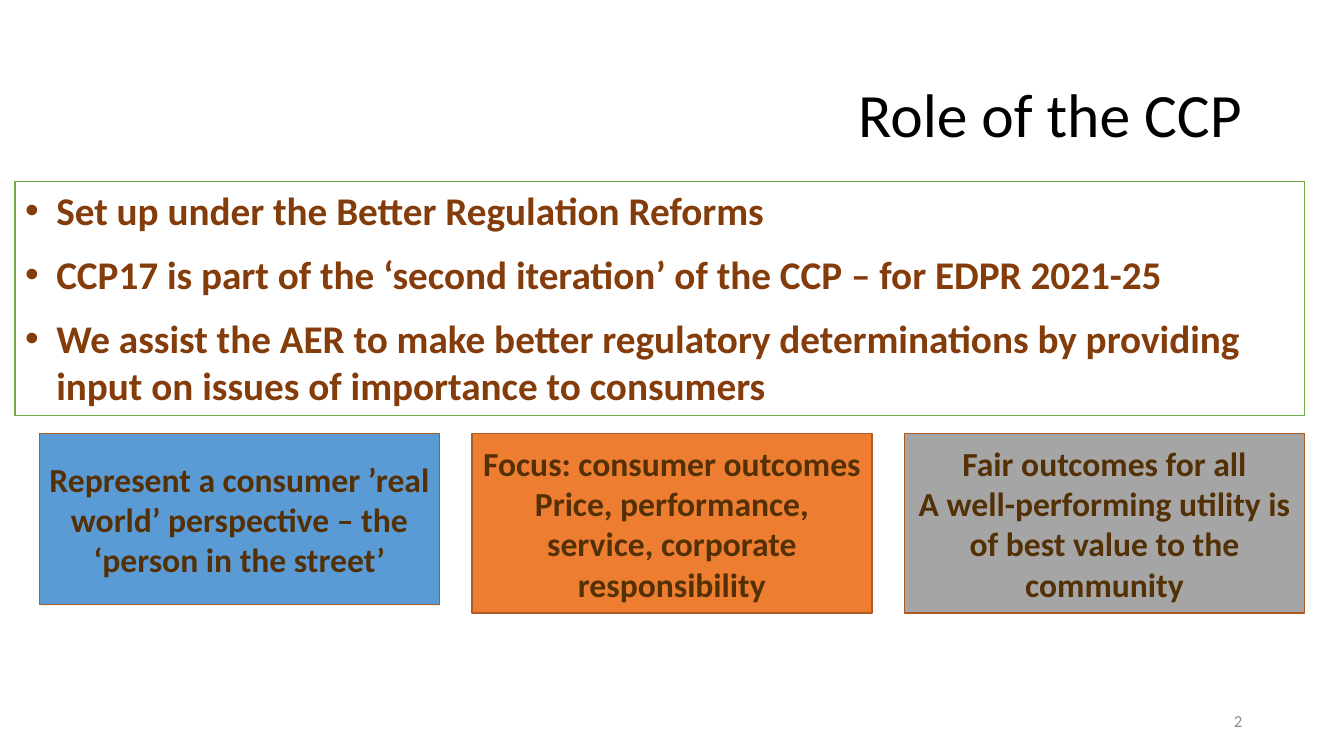
from pptx import Presentation
from pptx.dml.color import RGBColor
from pptx.enum.shapes import MSO_SHAPE
from pptx.enum.text import MSO_ANCHOR, PP_ALIGN
from pptx.oxml.ns import qn
from pptx.util import Pt
from lxml import etree

PX = 9144  # EMU per px, 100 px to the inch
RECTANGLE = MSO_SHAPE.RECTANGLE
TOP, MIDDLE = MSO_ANCHOR.TOP, MSO_ANCHOR.MIDDLE
LEFT, CENTER, RIGHT = PP_ALIGN.LEFT, PP_ALIGN.CENTER, PP_ALIGN.RIGHT

BLACK = RGBColor(0x00, 0x00, 0x00)
GRAY = RGBColor(0x8C, 0x8C, 0x8C)
GREEN = RGBColor(0x70, 0xAD, 0x47)
RUST = RGBColor(0x84, 0x3C, 0x0B)
BROWN = RGBColor(0x53, 0x30, 0x05)
COPPER = RGBColor(0xAF, 0x5C, 0x24)
BLUE = RGBColor(0x5B, 0x9B, 0xD5)
ORANGE = RGBColor(0xED, 0x7D, 0x31)
SILVER = RGBColor(0xA5, 0xA5, 0xA5)

ROLE_POINTS = [
    "Set up under the Better Regulation Reforms",
    "CCP17 is part of the ‘second iteration’ of the CCP – for EDPR 2021-25",
    "We assist the AER to make better regulatory determinations by providing "
    "input on issues of importance to consumers",
]
PILLARS = [
    (BLUE, 170, ["Represent a consumer ’real world’ perspective – the "
                 "‘person in the street’"]),
    (ORANGE, 178, ["Focus: consumer outcomes",
                   "Price, performance, service, corporate responsibility"]),
    (SILVER, 178, ["Fair outcomes for all",
                   "A well-performing utility is of best value to the community"]),
]
PILLAR_LEFT, PILLAR_TOP, PILLAR_WIDTH, PILLAR_STEP = 39, 430, 397, 429


def apply(target, values):
    for name, value in values.items():
        setattr(target, name, value)


class SlideBuilder:
    """Holds the font, the deck and the current page."""

    font_name = "Calibri"

    def __init__(self, width, height):
        self.deck = Presentation()
        apply(self.deck, {"slide_width": width * PX, "slide_height": height * PX})
        self.page = self.deck.slides.add_slide(self.deck.slide_layouts[6])

    def fill_text(self, box, lines, font, para_format, anchor):
        frame = box.text_frame
        apply(frame, {"word_wrap": True, "vertical_anchor": anchor})
        for index, line in enumerate(lines):
            para = frame.paragraphs[0] if index == 0 else frame.add_paragraph()
            apply(para, para_format)
            span = para.add_run()
            span.text = line
            font_values = {"name": self.font_name, **font}
            span.font.color.rgb = font_values.pop("color")
            apply(span.font, font_values)
        return frame

    def label(self, place, text, font, para_format):
        box = self.page.shapes.add_textbox(*(PX * length for length in place))
        self.fill_text(box, [text], font, para_format, MIDDLE)

    def panel(self, place, lines, font, para_format, line_color, fill=None, anchor=MIDDLE):
        box = self.page.shapes.add_shape(RECTANGLE, *(PX * length for length in place))
        box.shadow.inherit = False
        if fill is None:
            box.fill.background()
        else:
            box.fill.solid()
            box.fill.fore_color.rgb = fill
        box.line.color.rgb = line_color
        box.line.width = Pt(1)
        return self.fill_text(box, lines, font, para_format, anchor)

    def bullets(self, frame, indent):
        """Give every paragraph a round bullet with a hanging indent in px."""
        for para in frame.paragraphs:
            properties = para._p.get_or_add_pPr()
            properties.set("marL", str(indent * PX))
            properties.set("indent", str(-indent * PX))
            etree.SubElement(properties, qn("a:buFont")).set("typeface", "Arial")
            etree.SubElement(properties, qn("a:buChar")).set("char", "•")


def main():
    slide = SlideBuilder(1333, 750)
    slide.label((92, 44, 1150, 145), "Role of the CCP",
                {"size": Pt(44), "color": BLACK},
                {"alignment": RIGHT, "line_spacing": 0.9})
    slide.label((942, 695, 300, 40), "2",
                {"size": Pt(12), "color": GRAY}, {"alignment": RIGHT})

    role = slide.panel((15, 180, 1279, 232), ROLE_POINTS,
                       {"size": Pt(28), "bold": True, "color": RUST},
                       {"alignment": LEFT, "space_before": Pt(6), "space_after": Pt(6)},
                       GREEN, anchor=TOP)
    slide.bullets(role, 31)

    for column, (fill, height, lines) in enumerate(PILLARS):
        left = PILLAR_LEFT + column * PILLAR_STEP
        slide.panel((left, PILLAR_TOP, PILLAR_WIDTH, height), lines,
                    {"size": Pt(24), "bold": True, "color": BROWN},
                    {"alignment": CENTER}, COPPER, fill)

    slide.deck.save("out.pptx")


if __name__ == "__main__":
    main()
